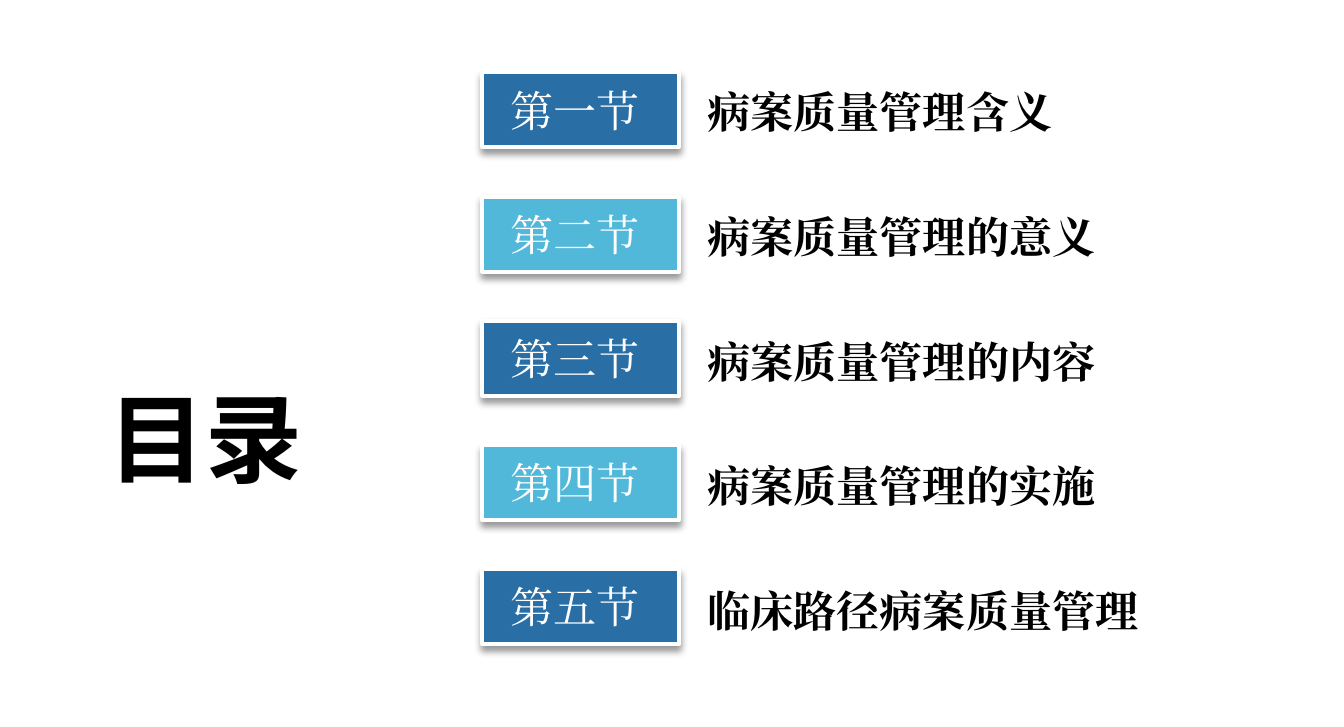
from lxml import etree
from pptx import Presentation
from pptx.dml.color import RGBColor
from pptx.enum.shapes import MSO_SHAPE
from pptx.enum.text import MSO_ANCHOR, MSO_AUTO_SIZE, PP_ALIGN
from pptx.oxml import parse_xml
from pptx.oxml.ns import qn
from pptx.util import Inches, Pt

RECTANGLE = MSO_SHAPE.RECTANGLE
MIDDLE = MSO_ANCHOR.MIDDLE
GROW = MSO_AUTO_SIZE.SHAPE_TO_FIT_TEXT
CENTER = PP_ALIGN.CENTER

DARK_BLUE = RGBColor(0x29, 0x6F, 0xA5)
LIGHT_BLUE = RGBColor(0x52, 0xB8, 0xDA)
WHITE = RGBColor(0xFF, 0xFF, 0xFF)
BLACK = RGBColor(0x00, 0x00, 0x00)

SHADOW = (
    '<a:effectLst xmlns:a="http://schemas.openxmlformats.org/drawingml/2006/main">'
    '<a:outerShdw blurRad="50800" dist="38100" dir="5400000" rotWithShape="0">'
    '<a:srgbClr val="000000"><a:alpha val="40000"/></a:srgbClr>'
    '</a:outerShdw></a:effectLst>'
)

SECTIONS = [
    ("第一节 ", "病案质量管理含义", 3.3),
    ("第二节 ", "病案质量管理的意义", 3.3),
    ("第三节 ", "病案质量管理的内容", 3.3),
    ("第四节 ", "病案质量管理的实施", 3.3),
    ("第五节 ", "临床路径病案质量管理", 3.81),
]


def write(frame, text, size, face, color, bold=False):
    """Fill the frame with one paragraph, using the face for Chinese text too."""
    paragraph = frame.paragraphs[0]
    paragraph.text = text
    font = paragraph.font
    font.size = Pt(size)
    font.name = face
    font.bold = bold
    font.color.rgb = color
    defaults = paragraph._p.pPr.find(qn("a:defRPr"))
    etree.SubElement(defaults, qn("a:ea")).set("typeface", face)
    return paragraph


prs = Presentation()
prs.slide_width = Inches(10.39)
prs.slide_height = Inches(5.62)
slide = prs.slides.add_slide(prs.slide_layouts[6])

heading = slide.shapes.add_textbox(Inches(0.74), Inches(2.88), Inches(1.79), Inches(1.01))
heading.text_frame.word_wrap = False
heading.text_frame.auto_size = GROW
write(heading.text_frame, "目录", 54, "Noto Sans CJK SC", BLACK, bold=True)

for row, (number, topic, topic_width) in enumerate(SECTIONS):
    tag = slide.shapes.add_shape(
        RECTANGLE, Inches(3.73), Inches(0.56 + 0.96 * row), Inches(1.52), Inches(0.58))
    tag.fill.solid()
    tag.fill.fore_color.rgb = LIGHT_BLUE if row % 2 else DARK_BLUE
    tag.line.color.rgb = WHITE
    tag.line.width = Pt(2.25)
    tag._element.spPr.append(parse_xml(SHADOW))
    tag.text_frame.vertical_anchor = MIDDLE
    write(tag.text_frame, number, 24, "Times New Roman", WHITE).alignment = CENTER

    caption = slide.shapes.add_textbox(
        Inches(5.37), Inches(0.61 + 0.965 * row), Inches(topic_width), Inches(0.5))
    caption.text_frame.word_wrap = True
    caption.text_frame.auto_size = GROW
    write(caption.text_frame, topic, 24, "Times New Roman", BLACK, bold=True)

prs.save("out.pptx")
